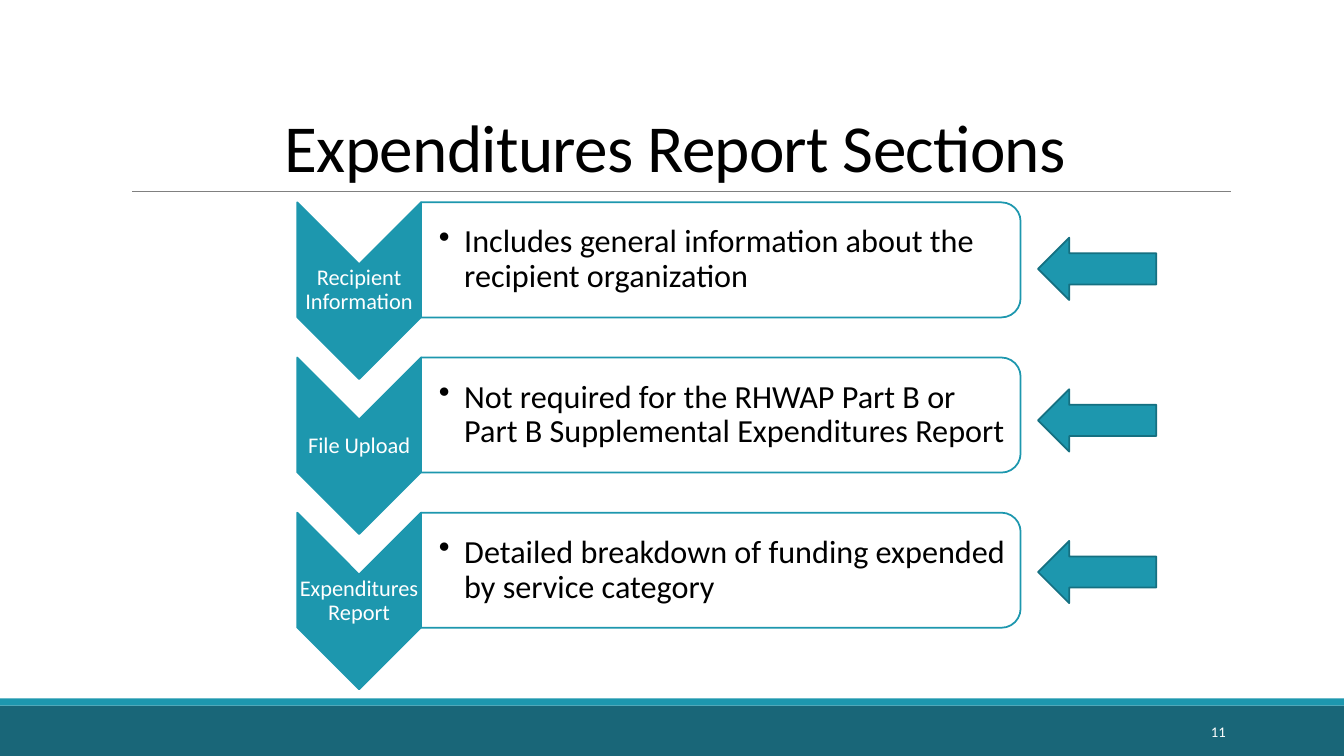
import pptx
import pptx.util
import pptx.dml.color
import pptx.enum.shapes
import pptx.enum.text
import pptx.oxml.ns
from lxml import etree

Cm, Pt = pptx.util.Cm, pptx.util.Pt
KIND = pptx.enum.shapes.MSO_SHAPE
ALIGN = pptx.enum.text.PP_ALIGN
ANCHOR = pptx.enum.text.MSO_ANCHOR
qn = pptx.oxml.ns.qn

WIDE, HIGH = 33.87, 19.05
COLORS = {
    "teal": "1D97AE", "edge": "157081", "deep": "196678",
    "rule": "808080", "white": "FFFFFF", "black": "000000",
}
STEPS = [
    ("Recipient Information",
     "Includes general information about the recipient organization"),
    ("File Upload",
     "Not required for the RHWAP Part B or Part B Supplemental Expenditures Report"),
    ("Expenditures Report",
     "Detailed breakdown of funding expended by service category"),
]


def color(name):
    return pptx.dml.color.RGBColor.from_string(COLORS[name])


def shape(slide, kind, box, fill, line=None, turn=False):
    """Fill the box with a shape, turned a quarter clockwise if asked."""
    x, y, w, h = box
    if turn:
        x, y, w, h = x + (w - h) / 2, y + (h - w) / 2, h, w
    item = slide.shapes.add_shape(kind, Cm(x), Cm(y), Cm(w), Cm(h))
    item.shadow.inherit = False
    item.rotation = 90 if turn else 0
    item.fill.solid()
    item.fill.fore_color.rgb = color(fill)
    if line:
        item.line.color.rgb = color(line)
        item.line.width = Pt(1.25)
    else:
        item.line.fill.background()


def style(para, size, ink, align, lead=None):
    para.font.name = "Calibri"
    para.font.size = Pt(size)
    para.font.color.rgb = color(ink)
    para.alignment = align
    if lead:
        para.line_spacing = lead


def label(slide, box, text, size, ink, align, pad=0.03, left=0.03, lead=None):
    item = slide.shapes.add_textbox(*map(Cm, box))
    frame = item.text_frame
    frame.word_wrap = True
    frame.vertical_anchor = ANCHOR.MIDDLE
    frame.margin_left = Cm(left)
    frame.margin_right = frame.margin_top = frame.margin_bottom = Cm(pad)
    para = frame.paragraphs[0]
    para.text = text
    style(para, size, ink, align, lead)
    return para


def bullet(para):
    props = para._p.get_or_add_pPr()
    props.set("marL", str(Cm(0.64)))
    props.set("indent", str(-Cm(0.64)))
    mark = etree.Element(qn("a:buChar"), char="•")
    props.find(qn("a:defRPr")).addprevious(mark)


def heading(slide, box):
    x, y, w, h = box
    title = slide.shapes.title
    title.left, title.top, title.width, title.height = map(Cm, box)
    frame = title.text_frame
    frame.auto_size = pptx.enum.text.MSO_AUTO_SIZE.NONE
    frame.vertical_anchor = ANCHOR.BOTTOM
    para = frame.paragraphs[0]
    para.text = "Expenditures Report Sections"
    style(para, 48, "black", ALIGN.CENTER, 0.85)
    para.runs[0]._r.get_or_add_rPr().set("spc", "-50")
    # Rule under the title
    rule = slide.shapes.add_connector(
        pptx.enum.shapes.MSO_CONNECTOR.STRAIGHT,
        Cm(x + 0.28), Cm(y + h), Cm(x + w + 0.02), Cm(y + h))
    rule.line.color.rgb = color("rule")
    rule.line.width = Pt(0.5)
    etree.SubElement(rule._element.spPr, qn("a:effectLst"))


def step(slide, box, name, note):
    x, y, w, h = box
    tip = 3.12
    # Chevron and its name
    shape(slide, KIND.CHEVRON, (x, y, tip, h), "teal", "teal", True)
    label(slide, (x, y + tip / 2, tip, h - tip), name, 16, "white",
          ALIGN.CENTER, lead=0.9)
    # Panel and its note
    tall = 2.9
    shape(slide, KIND.ROUND_2_SAME_RECTANGLE, (x + tip, y, w - tip, tall),
          "white", "teal", True)
    para = label(slide, (x + tip, y + 0.14, w - tip - 0.14, tall - 0.28), note,
                 23, "black", ALIGN.LEFT, pad=0.04, left=0.45, lead=0.9)
    bullet(para)


def footer(slide, box):
    x, y, w, h = box
    strip = 0.18
    shape(slide, KIND.RECTANGLE, (x, y + strip, w, h - strip), "deep")
    shape(slide, KIND.RECTANGLE, (x, y, w, strip), "teal")
    # Page number
    label(slide, (x + 27.51, y + 0.34, 3.63, 1.01), "11", 10.5, "white",
          ALIGN.RIGHT, pad=0.25)


def main():
    deck = pptx.Presentation()
    deck.slide_width, deck.slide_height = Cm(WIDE), Cm(HIGH)
    slide = deck.slides.add_slide(deck.slide_layouts[5])
    footer(slide, (0, 17.6, WIDE, HIGH - 17.6))
    heading(slide, (3.05, 0.79, 27.94, 4.04))
    for row, (name, note) in enumerate(STEPS):
        step(slide, (7.49, 5.1 + 3.91 * row, 18.23, 4.45), name, note)
        shape(slide, KIND.LEFT_ARROW, (26.16, 5.99 + 3.82 * row, 2.98, 1.57),
              "teal", "edge")
    deck.save("out.pptx")


if __name__ == "__main__":
    main()
